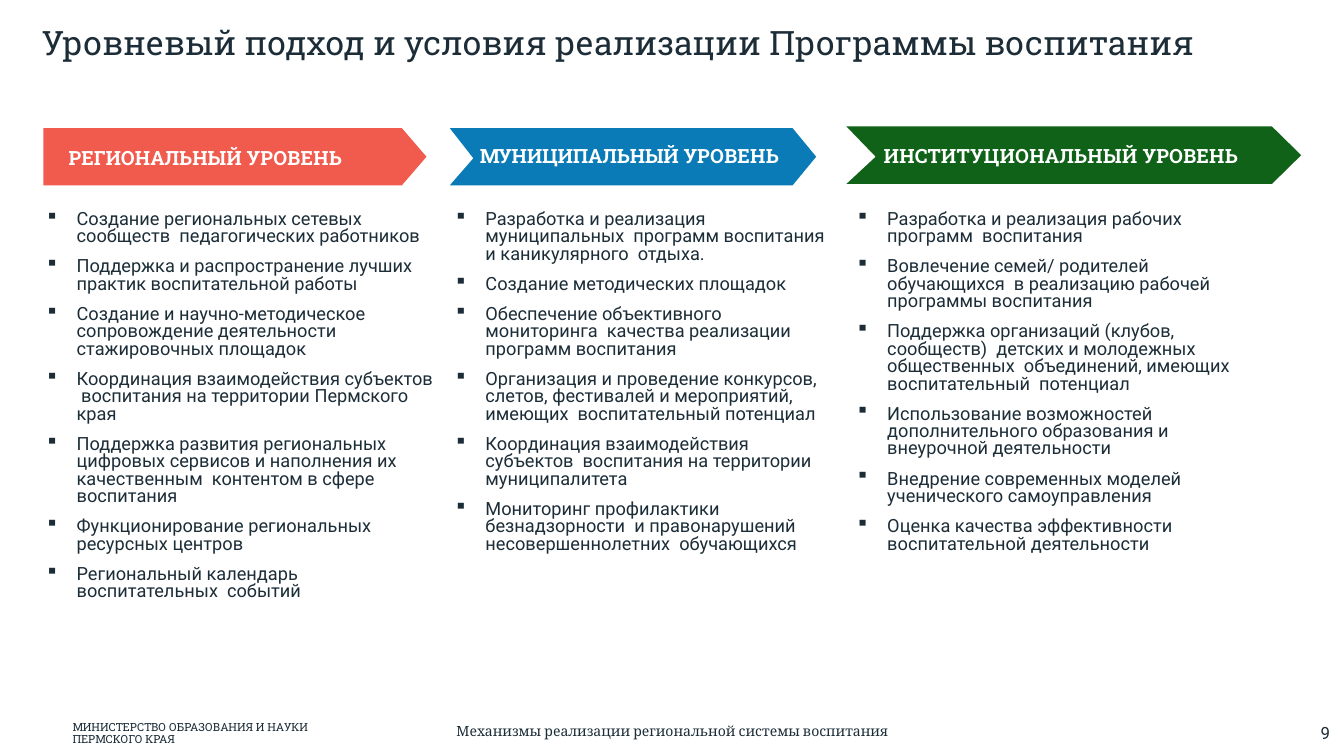
"""Build the slide on the three levels of the regional upbringing programme."""
from lxml.etree import SubElement
from pptx import Presentation
from pptx.dml.color import RGBColor
from pptx.enum.text import MSO_ANCHOR, PP_ALIGN
from pptx.oxml.ns import qn
from pptx.util import Inches, Pt

COLORS = {
    "text": "1C2D38",
    "white": "FFFFFF",
    "regional": "F15B4E",
    "municipal": "0A7BB6",
    "institutional": "116219",
}
ARROW_HEIGHT = 1.14


def add_run(paragraph, text, font_name, size, color, bold=False, spacing=0):
    run = paragraph.add_run()
    run.text = text
    run.font.name = font_name
    run.font.size = Pt(size)
    run.font.bold = bold
    run.font.color.rgb = RGBColor.from_string(COLORS[color])
    if spacing:
        run.font._element.set("spc", str(spacing))


def add_text_frame(slide, left, top, width, height, tight=False):
    shape = slide.shapes.add_textbox(Inches(left), Inches(top), Inches(width), Inches(height))
    frame = shape.text_frame
    frame.word_wrap = True
    if tight:
        frame.margin_left = frame.margin_right = frame.margin_bottom = 0
        frame.margin_top = Inches(0.03)
    return frame


presentation = Presentation()
presentation.slide_width = Inches(26.66)
presentation.slide_height = Inches(15)
slide = presentation.slides.add_slide(presentation.slide_layouts[5])

title = slide.shapes.title
title.left, title.top = Inches(0.73), Inches(0.11)
title.width, title.height = Inches(25.2), Inches(1.57)
title.text_frame.vertical_anchor = MSO_ANCHOR.MIDDLE
title.text_frame.word_wrap = True
paragraph = title.text_frame.paragraphs[0]
paragraph.alignment = PP_ALIGN.LEFT
paragraph.line_spacing = 0.9
add_run(paragraph, "Уровневый подход и условия реализации Программы воспитания",
        "Roboto Slab", 48, "text")

levels = [
    {
        "color": "regional",
        "arrow": (0.86, 2.54, 7.6), "tip": 0.49, "notch": 0,
        "label": (1.33, 2.86, 6.16),
        "runs": [("РЕГИОНАЛЬНЫЙ ", 10), ("УРОВЕНЬ", 40)],
        "list": (0.86, 7.81, 7.85),
        "items": [
            "Создание региональных сетевых сообществ  педагогических работников",
            "Поддержка и распространение лучших  практик воспитательной работы",
            "Создание и научно-методическое сопровождение деятельности стажировочных площадок",
            "Координация взаимодействия субъектов  воспитания на территории Пермского края",
            "Поддержка развития региональных цифровых сервисов и наполнения их "
            "качественным  контентом в сфере воспитания",
            "Функционирование региональных ресурсных центров",
            "Региональный календарь воспитательных  событий",
        ],
    },
    {
        "color": "municipal",
        "arrow": (8.92, 2.54, 7.27), "tip": 0.47, "notch": 0.47,
        "label": (9.49, 2.82, 6.49),
        "runs": [("МУНИЦИПАЛЬНЫЙ ", -10), ("УРОВЕНЬ", 40)],
        "list": (8.97, 7.44, 6.9),
        "items": [
            "Разработка и реализация муниципальных  программ воспитания и каникулярного  отдыха.",
            "Создание методических площадок",
            "Обеспечение объективного мониторинга  качества реализации программ воспитания",
            "Организация и проведение конкурсов,  слетов, фестивалей и мероприятий, "
            "имеющих  воспитательный потенциал",
            "Координация взаимодействия субъектов  воспитания на территории муниципалитета",
            "Мониторинг профилактики безнадзорности  и правонарушений "
            "несовершеннолетних  обучающихся",
        ],
    },
    {
        "color": "institutional",
        "arrow": (16.79, 2.51, 9.02), "tip": 0.58, "notch": 0.58,
        "label": (17.5, 2.82, 7.6),
        "runs": [("ИНСТИТУЦИОНАЛЬНЫЙ УРОВЕНЬ", 40)],
        "list": (16.94, 8.16, 6.9),
        "items": [
            "Разработка и реализация рабочих программ  воспитания",
            "Вовлечение семей/ родителей обучающихся  в реализацию рабочей программы воспитания",
            "Поддержка организаций (клубов, сообществ)  детских и молодежных "
            "общественных  объединений, имеющих воспитательный  потенциал",
            "Использование возможностей дополнительного образования и внеурочной деятельности",
            "Внедрение современных моделей ученического самоуправления",
            "Оценка качества эффективности воспитательной деятельности",
        ],
    },
]

for level in levels:
    left, top, width = level["arrow"]
    right, bottom = left + width, top + ARROW_HEIGHT
    shoulder = right - level["tip"]
    outline = [
        (shoulder, top), (right, top + ARROW_HEIGHT / 2), (shoulder, bottom),
        (left, bottom), (left + level["notch"], top + 0.6),
    ]
    builder = slide.shapes.build_freeform(Inches(left), Inches(top))
    builder.add_line_segments([(Inches(x), Inches(y)) for x, y in outline], close=True)
    arrow = builder.convert_to_shape()
    arrow.shadow.inherit = False
    arrow.fill.solid()
    arrow.fill.fore_color.rgb = RGBColor.from_string(COLORS[level["color"]])
    arrow.line.fill.background()

    label = add_text_frame(slide, *level["label"], 0.5, tight=True).paragraphs[0]
    label._p.get_or_add_pPr().set("marL", str(Inches(0.03)))
    for text, spacing in level["runs"]:
        add_run(label, text, "Roboto Slab", 28, "white", bold=True, spacing=spacing)

    left, width, height = level["list"]
    frame = add_text_frame(slide, left, 4.16, width, height, tight=True)
    for index, item in enumerate(level["items"]):
        paragraph = frame.add_paragraph() if index else frame.paragraphs[0]
        paragraph.line_spacing = 0.8
        paragraph.space_before = Pt(18 if index else 0)
        properties = paragraph._p.get_or_add_pPr()
        properties.set("marL", str(Inches(0.66)))
        properties.set("indent", str(Inches(-0.62)))
        SubElement(properties, qn("a:buChar")).set("char", "▪")
        add_run(paragraph, item, "Roboto", 26, "text")

footers = [
    ((1.34, 14.2, 5.51, 0.74), ["МИНИСТЕРСТВО ОБРАЗОВАНИЯ И НАУКИ", "ПЕРМСКОГО КРАЯ"],
     "Roboto Slab", 16, PP_ALIGN.LEFT, MSO_ANCHOR.MIDDLE, 0.9),
    ((7.13, 14.08, 12.41, 0.89), ["Механизмы реализации региональной системы воспитания"],
     "Cambria", 20, PP_ALIGN.CENTER, MSO_ANCHOR.MIDDLE, 0.9),
    ((25.3, 14.3, 1.18, 0.5), ["9"], "Roboto", 24, PP_ALIGN.RIGHT, MSO_ANCHOR.TOP, 1.0),
]
for box, lines, font_name, size, alignment, anchor, line_spacing in footers:
    frame = add_text_frame(slide, *box)
    frame.vertical_anchor = anchor
    paragraph = frame.paragraphs[0]
    paragraph.alignment = alignment
    paragraph.line_spacing = line_spacing
    for index, line in enumerate(lines):
        if index:
            paragraph.add_line_break()
        add_run(paragraph, line, font_name, size, "text")

presentation.save("out.pptx")
